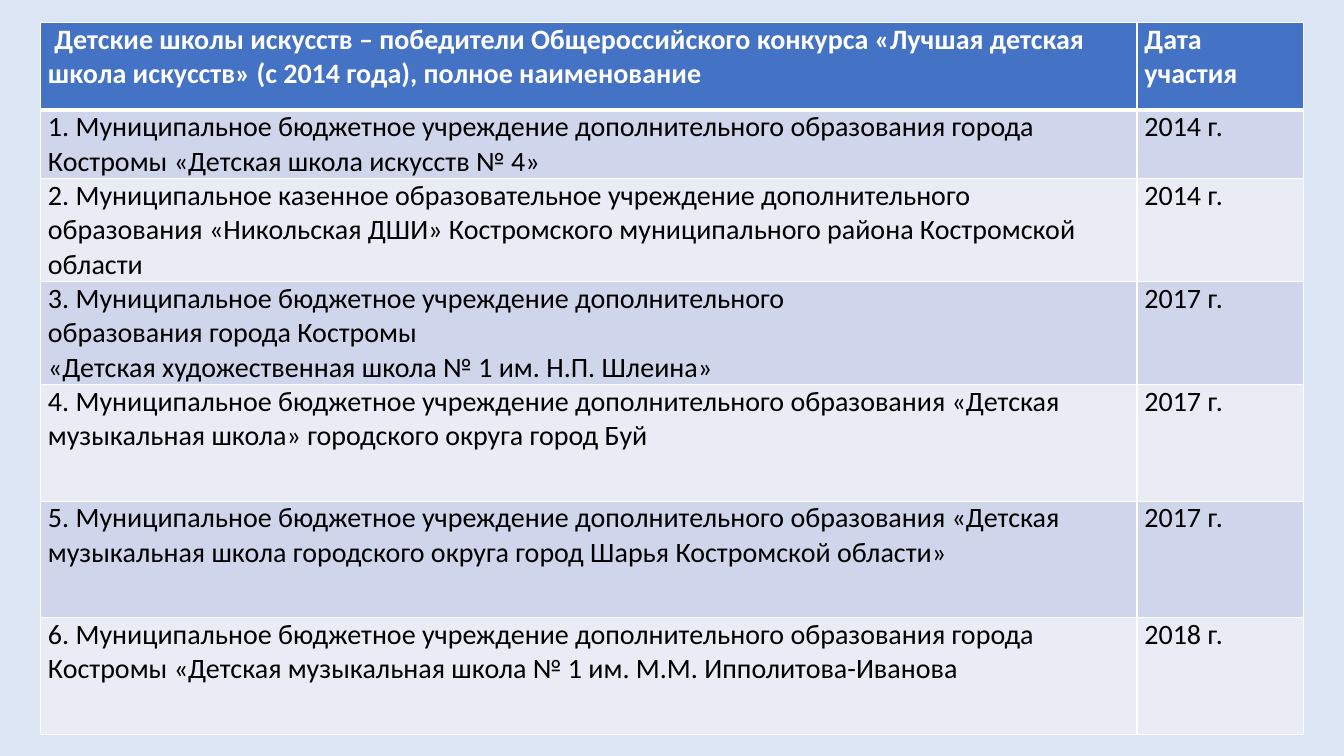
"""Build a slide with a table of the winning children's art schools."""
from dataclasses import dataclass

from lxml import etree
from pptx import Presentation
from pptx import util as u
from pptx.dml.color import RGBColor
from pptx.oxml import ns


@dataclass(frozen=True)
class Theme:
    background: str = "DCE5F4"
    header: str = "4472C4"
    bands: tuple = ("CFD5EA", "E9EBF5")
    light: str = "FFFFFF"
    dark: str = "000000"
    font: str = "Calibri"
    size: int = 20


theme = Theme()


def add_border(cell, side, color, width):
    line = etree.SubElement(cell._tc.get_or_add_tcPr(), ns.qn(f"a:ln{side}"), w=str(u.Pt(width)))
    fill = etree.SubElement(line, ns.qn("a:solidFill"))
    etree.SubElement(fill, ns.qn("a:srgbClr"), val=color)


def write_cell(cell, text, fill, color, bold=False, bottom=1):
    for side in "LRTB":
        add_border(cell, side, theme.light, bottom if side == "B" else 1)
    cell.fill.solid()
    cell.fill.fore_color.rgb = RGBColor.from_string(fill)
    cell.margin_left = cell.margin_right = u.Pt(5.3)
    cell.margin_top = cell.margin_bottom = 0
    cell.text_frame.text = text
    for para in cell.text_frame.paragraphs:
        for span in para.runs:
            span.font.name = theme.font
            span.font.size = u.Pt(theme.size)
            span.font.bold = bold
            span.font.color.rgb = RGBColor.from_string(color)


heading = (
    "Детские школы искусств – победители Общероссийского конкурса «Лучшая детская школа искусств» (с 2014 года), полное наименование",
    "Дата участия",
)
schools = [
    ("1. Муниципальное бюджетное учреждение дополнительного образования города Костромы «Детская школа искусств № 4»", "2014 г."),
    ("2. Муниципальное казенное образовательное учреждение дополнительного образования «Никольская ДШИ» Костромского муниципального района Костромской области", "2014 г."),
    ("3. Муниципальное бюджетное учреждение дополнительного\nобразования города Костромы\n«Детская художественная школа № 1 им. Н.П. Шлеина»", "2017 г."),
    ("4. Муниципальное бюджетное учреждение дополнительного образования «Детская музыкальная школа» городского округа город Буй", "2017 г."),
    ("5. Муниципальное бюджетное учреждение дополнительного образования «Детская музыкальная школа городского округа город Шарья Костромской области»", "2017 г."),
    ("6. Муниципальное бюджетное учреждение дополнительного образования города Костромы «Детская музыкальная школа № 1 им. М.М. Ипполитова-Иванова", "2018 г."),
]
column_widths = (783.2, 118.8)
row_heights = (62.5, 49, 73.5, 73.5, 83.2, 83.2, 83.2)

deck = Presentation()
deck.slide_width, deck.slide_height = u.Pt(960), u.Pt(540)
page = deck.slides.add_slide(deck.slide_layouts[6])
page.background.fill.solid()
page.background.fill.fore_color.rgb = RGBColor.from_string(theme.background)

table = page.shapes.add_table(
    len(row_heights), len(column_widths), u.Pt(29), u.Pt(16.3),
    u.Pt(sum(column_widths)), u.Pt(sum(row_heights)),
).table
for column, width in zip(table.columns, column_widths):
    column.width = u.Pt(width)
for row, height in zip(table.rows, row_heights):
    row.height = u.Pt(height)

for column, text in enumerate(heading):
    write_cell(table.cell(0, column), text, theme.header, theme.light, bold=True, bottom=3)
heading_para = table.cell(0, 0).text_frame.paragraphs[0]
heading_para._p.get_or_add_pPr().set("indent", str(u.Pt(4.5)))

for index, school in enumerate(schools):
    for column, text in enumerate(school):
        write_cell(table.cell(index + 1, column), text, theme.bands[index % 2], theme.dark)

deck.save("out.pptx")
